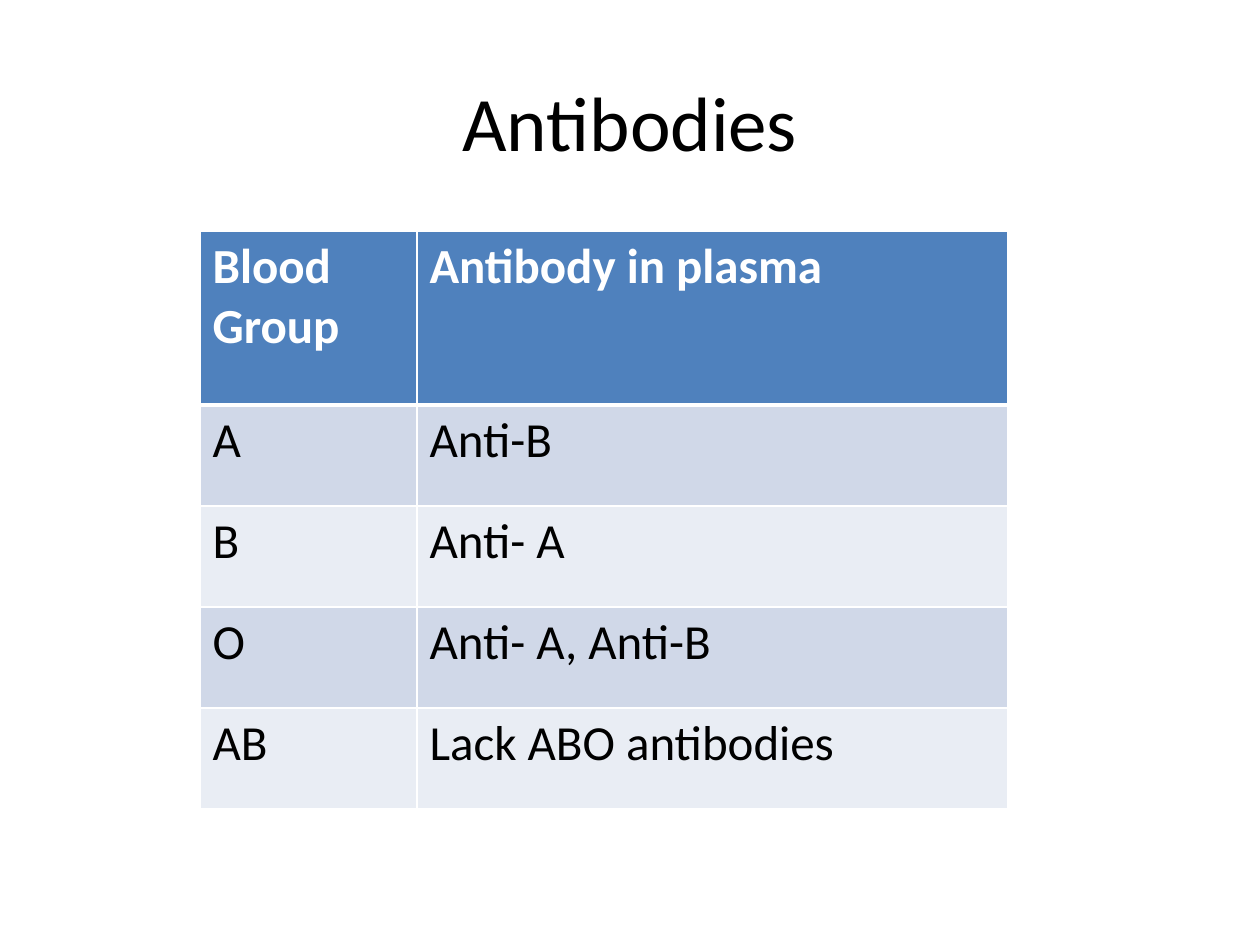
from typing import NamedTuple

from lxml import etree
from pptx import Presentation
from pptx import util as u
from pptx.dml.color import RGBColor
from pptx.enum import text
from pptx.oxml import ns

PX_PER_INCH = 126
FONT = "Calibri"
COLORS = {
    "ink": "000000",
    "paper": "FFFFFF",
    "header": "4F81BD",
    "odd_band": "D0D8E8",
    "even_band": "E9EDF4",
}


class GroupRow(NamedTuple):
    blood_group: str
    antibody: str


class CellStyle(NamedTuple):
    fill: str
    ink: str
    bold: bool
    top_border: int
    bottom_border: int


ROWS = [
    GroupRow("Blood Group", "Antibody in plasma"),
    GroupRow("A", "Anti-B"),
    GroupRow("B", "Anti- A"),
    GroupRow("O", "Anti- A, Anti-B"),
    GroupRow("AB", "Lack ABO antibodies"),
]
COLUMN_WIDTHS = [217, 591]
HEADER_HEIGHT = 174
BODY_HEIGHT = 101


def px(length: int) -> int:
    return round(length * u.Inches(1) / PX_PER_INCH)


def add_span(para, words: str, size: int, ink: str, bold: bool = False) -> None:
    span = para.add_run()
    span.text = words
    span.font.name = FONT
    span.font.size = u.Pt(size)
    span.font.bold = bold
    span.font.color.rgb = RGBColor.from_string(COLORS[ink])


def add_borders(cell, style: CellStyle) -> None:
    properties = cell._tc.get_or_add_tcPr()
    widths = {"L": 1, "R": 1, "T": style.top_border, "B": style.bottom_border}
    for side, width in widths.items():
        line = etree.SubElement(properties, ns.qn(f"a:ln{side}"), w=str(u.Pt(width)))
        fill = etree.SubElement(line, ns.qn("a:solidFill"))
        etree.SubElement(fill, ns.qn("a:srgbClr"), val=COLORS["paper"])


def row_style(index: int) -> CellStyle:
    if index == 0:
        return CellStyle("header", "paper", True, 1, 3)
    band = "odd_band" if index % 2 else "even_band"
    return CellStyle(band, "ink", False, 3 if index == 1 else 1, 1)


def draw_cell(cell, words: str, style: CellStyle) -> None:
    add_borders(cell, style)
    cell.fill.solid()
    cell.fill.fore_color.rgb = RGBColor.from_string(COLORS[style.fill])
    add_span(cell.text_frame.paragraphs[0], words, 28, style.ink, style.bold)


def draw_title(page, words: str) -> None:
    box = page.shapes.title
    box.left, box.top, box.width, box.height = px(63), px(42), px(1134), px(157)
    box.text_frame.vertical_anchor = text.MSO_ANCHOR.MIDDLE
    para = box.text_frame.paragraphs[0]
    para.alignment = text.PP_ALIGN.CENTER
    add_span(para, words, 44, "ink")


def draw_table(page, rows: list[GroupRow]) -> None:
    heights = [HEADER_HEIGHT] + [BODY_HEIGHT] * (len(rows) - 1)
    table = page.shapes.add_table(
        len(rows), len(COLUMN_WIDTHS),
        px(200), px(231), px(sum(COLUMN_WIDTHS)), px(sum(heights)),
    ).table
    for column, width in zip(table.columns, COLUMN_WIDTHS):
        column.width = px(width)
    for index, (row, height) in enumerate(zip(rows, heights)):
        table.rows[index].height = px(height)
        for cell, words in zip(table.rows[index].cells, row):
            draw_cell(cell, words, row_style(index))


def main() -> None:
    deck = Presentation()
    deck.slide_width, deck.slide_height = u.Inches(10), u.Inches(7.5)
    page = deck.slides.add_slide(deck.slide_layouts[5])
    draw_title(page, "Antibodies")
    draw_table(page, ROWS)
    deck.save("out.pptx")


if __name__ == "__main__":
    main()
